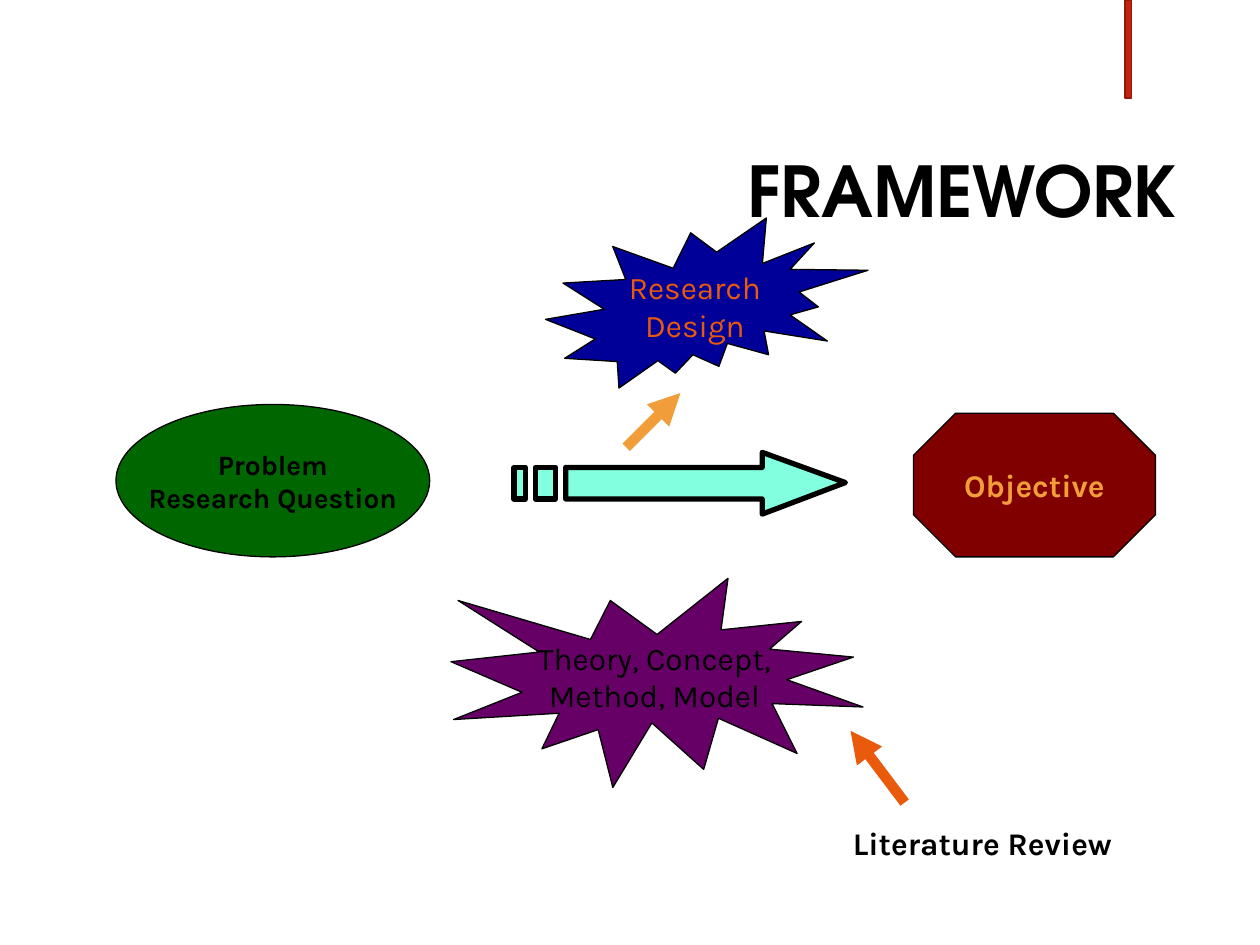
"""Build the research framework slide on a grid of 100 columns by 75 rows."""
from lxml import etree
from pptx import Presentation
from pptx import util as u
from pptx.dml.color import RGBColor
from pptx.enum import shapes, text
from pptx.oxml.ns import qn

THEME = {
    "heading": "TeX Gyre Adventor", "body": "Karla",
    "title_size": 40, "label_size": 18, "small_size": 16,
    "black": "000000", "red": "C4220D", "dark_red": "91190A",
    "green": "006600", "maroon": "800000", "purple": "660066", "navy": "000099",
    "aqua": "81FFDE", "amber": "F09D3A", "orange": "EA5A0C",
}

presentation = Presentation()
presentation.slide_width, presentation.slide_height = u.Inches(10), u.Inches(7.5)
slide = presentation.slides.add_slide(presentation.slide_layouts[6])
column, row = presentation.slide_width / 100, presentation.slide_height / 75


def paint(shape, fill, line, width):
    shape.shadow.inherit = False
    shape.fill.solid()
    shape.fill.fore_color.rgb = RGBColor.from_string(THEME[fill])
    shape.line.color.rgb = RGBColor.from_string(THEME[line])
    shape.line.width = u.Pt(width)


def write(shape, lines, size, color="black", bold=True, font="body", align="CENTER", wrap=False):
    frame = shape.text_frame
    frame.word_wrap = wrap
    frame.vertical_anchor = text.MSO_ANCHOR.MIDDLE
    frame.text = "\n".join(lines)
    for paragraph in frame.paragraphs:
        paragraph.alignment = text.PP_ALIGN[align]
        paragraph.font.name = THEME[font]
        paragraph.font.size = u.Pt(THEME[size])
        paragraph.font.bold = bold
        paragraph.font.color.rgb = RGBColor.from_string(THEME[color])


accent = slide.shapes.add_shape(
    shapes.MSO_SHAPE.RECTANGLE, int(89.3 * column), 0, int(0.5 * column), int(7.8 * row))
paint(accent, "red", "dark_red", 1)

title = slide.shapes.add_textbox(
    int(23.8 * column), int(8.4 * row), int(70.6 * column), int(14.1 * row))
write(title, ["FRAMEWORK"], "title_size", font="heading", align="RIGHT", wrap=True)
title.text_frame.paragraphs[0].line_spacing = 0.9

nodes = [
    ("OVAL", 9.2, 32.1, 24.9, 12.1, "green",
     ["Problem", "Research Question"], "small_size", "black", True),
    ("OCTAGON", 72.5, 32.8, 19.2, 11.4, "maroon", ["Objective"], "label_size", "amber", True),
    ("EXPLOSION1", 35.8, 45.9, 32.7, 16.6, "purple",
     ["Theory, Concept,", "Method, Model"], "label_size", "black", False),
    ("EXPLOSION2", 43.3, 17.3, 25.6, 13.5, "navy",
     ["Research", "Design"], "label_size", "orange", False),
]
for kind, left, top, width, height, fill, lines, size, color, bold in nodes:
    node = slide.shapes.add_shape(
        shapes.MSO_SHAPE[kind], int(left * column), int(top * row),
        int(width * column), int(height * row))
    paint(node, fill, "black", 0.75)
    write(node, lines, size, color, bold)

shaft_top, shaft_bottom = 37.1, 39.6
head = [(60.5, 35.9), (60.5, shaft_top), (44.9, shaft_top), (44.9, shaft_bottom),
        (60.5, shaft_bottom), (60.5, 40.8), (67.1, 38.3)]
stripes = [[(left, shaft_top), (left, shaft_bottom), (right, shaft_bottom), (right, shaft_top)]
           for left, right in ((42.5, 44.1), (40.8, 41.7))]
builder = slide.shapes.build_freeform(head[0][0] * column, head[0][1] * row)
for outline in [head, *stripes]:
    points = [(x * column, y * row) for x, y in outline]
    if outline is not head:
        builder.move_to(*points[0])
    builder.add_line_segments(points[1:], close=True)
striped_arrow = builder.convert_to_shape()
paint(striped_arrow, "aqua", "black", 3)

review = slide.shapes.add_textbox(
    int(66.7 * column), int(64.9 * row), int(27.2 * column), int(4 * row))
write(review, ["Literature Review"], "label_size", align="LEFT", wrap=True)

pointers = [(71.8, 63.7, 67.5, 58, "orange"), (49.7, 35.5, 54, 31.2, "amber")]
for x1, y1, x2, y2, color in pointers:
    pointer = slide.shapes.add_connector(
        shapes.MSO_CONNECTOR.STRAIGHT, int(x1 * column), int(y1 * row),
        int(x2 * column), int(y2 * row))
    pointer.line.color.rgb = RGBColor.from_string(THEME[color])
    pointer.line.width = u.Pt(6)
    etree.SubElement(pointer.line._get_or_add_ln(), qn("a:tailEnd"), type="triangle")
    etree.SubElement(pointer._element.spPr, qn("a:effectLst"))

presentation.save("out.pptx")
